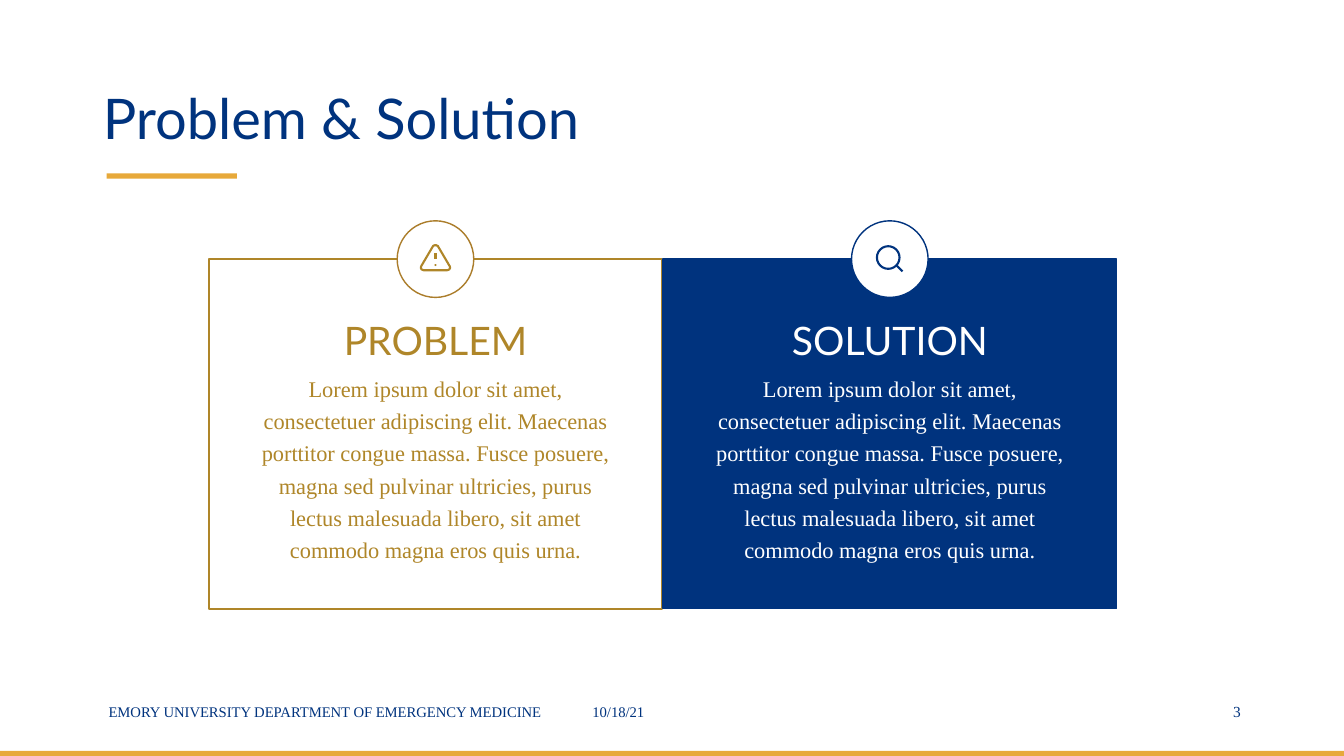
from dataclasses import dataclass

from lxml.etree import SubElement
from pptx import Presentation
from pptx.dml.color import RGBColor
from pptx.enum.shapes import MSO_CONNECTOR, MSO_SHAPE
from pptx.enum.text import MSO_ANCHOR, MSO_AUTO_SIZE, PP_ALIGN
from pptx.oxml.ns import qn
from pptx.util import Cm, Pt

HUES = {"navy": "00337E", "gold": "AF8629", "ochre": "AB7D2B",
        "amber": "E7A93A", "white": "FFFFFF"}
SANS, SERIF = "Lato", "Times New Roman"
WIDE, HIGH = 33.87, 19.05
CARD_X, CARD_Y, CARD_W, CARD_H = 5.26, 6.53, 11.43, 8.81
STEP = 11.45
BADGE, TEXT_W = 1.93, 9.73
LOREM = ("Lorem ipsum dolor sit amet, consectetuer adipiscing elit. "
         "Maecenas porttitor congue massa. Fusce posuere, magna sed pulvinar "
         "ultricies, purus lectus malesuada libero, sit amet commodo magna "
         "eros quis urna.")


@dataclass
class Card:
    head: str
    fill: str
    edge: str
    width: float
    ring: str
    ink: str
    head_id: int
    body_id: int


@dataclass
class Note:
    text: str
    left: float
    width: float
    size: float
    align: PP_ALIGN
    inset: float = 0.25


CARDS = [
    Card("PROBLEM", "white", "gold", 1.5, "ochre", "gold", 1, 2),
    Card("SOLUTION", "navy", "navy", 1, "navy", "white", 3, 4),
]
NOTES = [
    Note("EMORY UNIVERSITY DEPARTMENT OF EMERGENCY MEDICINE",
         2.34, 11.96, 10.5, PP_ALIGN.CENTER, 0),
    Note("10/18/21", 14.68, 7.62, 10.5, PP_ALIGN.LEFT),
    Note("3", 29.77, 1.75, 11, PP_ALIGN.RIGHT),
]

deck = Presentation()
deck.slide_width, deck.slide_height = Cm(WIDE), Cm(HIGH)
slide = deck.slides.add_slide(deck.slide_layouts.get_by_name("Comparison"))
shapes = slide.shapes


def hue(name: str) -> RGBColor:
    return RGBColor.from_string(HUES[name])


def paint(shape, fill: str | None, edge: str | None, width: float) -> None:
    shape.shadow.inherit = False
    if fill:
        shape.fill.solid()
        shape.fill.fore_color.rgb = hue(fill)
    else:
        shape.fill.background()
    if edge:
        shape.line.color.rgb = hue(edge)
        shape.line.width = Pt(width)
    else:
        shape.line.fill.background()


def block(kind: MSO_SHAPE, x: float, y: float, w: float, h: float,
          fill: str | None, edge: str | None = None, width: float = 1) -> None:
    paint(shapes.add_shape(kind, Cm(x), Cm(y), Cm(w), Cm(h)), fill, edge, width)


def disc(x: float, y: float, size: float, fill: str | None,
         edge: str | None = None, width: float = 1) -> None:
    """Draw a circle around its centre."""
    block(MSO_SHAPE.OVAL, x - size / 2, y - size / 2, size, size,
          fill, edge, width)


def stroke(x1: float, y1: float, x2: float, y2: float, ink: str) -> None:
    line = shapes.add_connector(MSO_CONNECTOR.STRAIGHT,
                                Cm(x1), Cm(y1), Cm(x2), Cm(y2))
    line.line.color.rgb = hue(ink)
    line.line.width = Pt(1.5)
    SubElement(line._element.spPr, qn("a:effectLst"))


def write(shape, text: str, font: str, size: float, ink: str,
          align: PP_ALIGN, anchor: MSO_ANCHOR, lead: float = 1) -> None:
    frame = shape.text_frame
    frame.text = text
    frame.word_wrap = True
    frame.auto_size = MSO_AUTO_SIZE.NONE
    frame.vertical_anchor = anchor
    para = frame.paragraphs[0]
    props = para._p.get_or_add_pPr()
    props.set("marL", "0")
    props.set("indent", "0")
    SubElement(props, qn("a:buNone"))
    para.alignment = align
    para.line_spacing = lead
    para.space_before = Pt(0)
    para.font.name = font
    para.font.size = Pt(size)
    para.font.bold = False
    para.font.color.rgb = hue(ink)


def place(index: int, x: float, y: float, w: float, h: float):
    """Move a placeholder and bring it to the front."""
    holder = slide.placeholders[index]
    holder.left, holder.top = Cm(x), Cm(y)
    holder.width, holder.height = Cm(w), Cm(h)
    shapes._spTree.append(holder._element)
    return holder


def alert(x: float, y: float) -> None:
    # Half outline in hundredths of a centimetre, mirrored to the left
    half = [(2, -35), (6, -33), (36, 18), (37, 22), (35, 26), (30, 28)]
    outline = half + [(-a, b) for a, b in reversed(half)]
    pen = shapes.build_freeform(*outline[0], scale=Cm(0.01))
    pen.add_line_segments(outline[1:], close=True)
    paint(pen.convert_to_shape(Cm(x), Cm(y)), None, "gold", 1.5)
    stroke(x, y - 0.15, x, y, "gold")
    disc(x, y + 0.15, 0.05, "gold")


def lens(x: float, y: float) -> None:
    disc(x - 0.04, y - 0.04, 0.57, None, "navy", 1.5)
    stroke(x + 0.16, y + 0.15, x + 0.32, y + 0.31, "navy")


# Title and accent bars
write(place(0, 2.34, 0.66, 29.21, 3.28), "Problem & Solution", SANS, 40,
      "navy", PP_ALIGN.LEFT, MSO_ANCHOR.BOTTOM, 0.9)
block(MSO_SHAPE.RECTANGLE, 2.69, 4.37, 3.28, 0.13, "amber")
block(MSO_SHAPE.RECTANGLE, 0, HIGH - 0.13, WIDE, 0.13, "amber")

# Cards with badge, heading and text
for spot, (card, icon) in enumerate(zip(CARDS, (alert, lens))):
    left = CARD_X + spot * STEP
    mid = left + CARD_W / 2
    edge = mid - TEXT_W / 2
    block(MSO_SHAPE.RECTANGLE, left, CARD_Y, CARD_W, CARD_H,
          card.fill, card.edge, card.width)
    disc(mid, CARD_Y, BADGE, "white", card.ring)
    icon(mid, CARD_Y)
    write(place(card.head_id, edge, 7.98, TEXT_W, 1.32), card.head, SANS, 28,
          card.ink, PP_ALIGN.CENTER, MSO_ANCHOR.TOP, 0.9)
    write(place(card.body_id, edge, 9.19, TEXT_W, 5.23), LOREM, SERIF, 16,
          card.ink, PP_ALIGN.CENTER, MSO_ANCHOR.TOP, 1.2)

# Footer
for note in NOTES:
    box = shapes.add_textbox(Cm(note.left), Cm(17.42), Cm(note.width), Cm(1.02))
    box.text_frame.margin_left = Cm(note.inset)
    write(box, note.text, SERIF, note.size, "navy", note.align,
          MSO_ANCHOR.MIDDLE)

deck.save("out.pptx")
